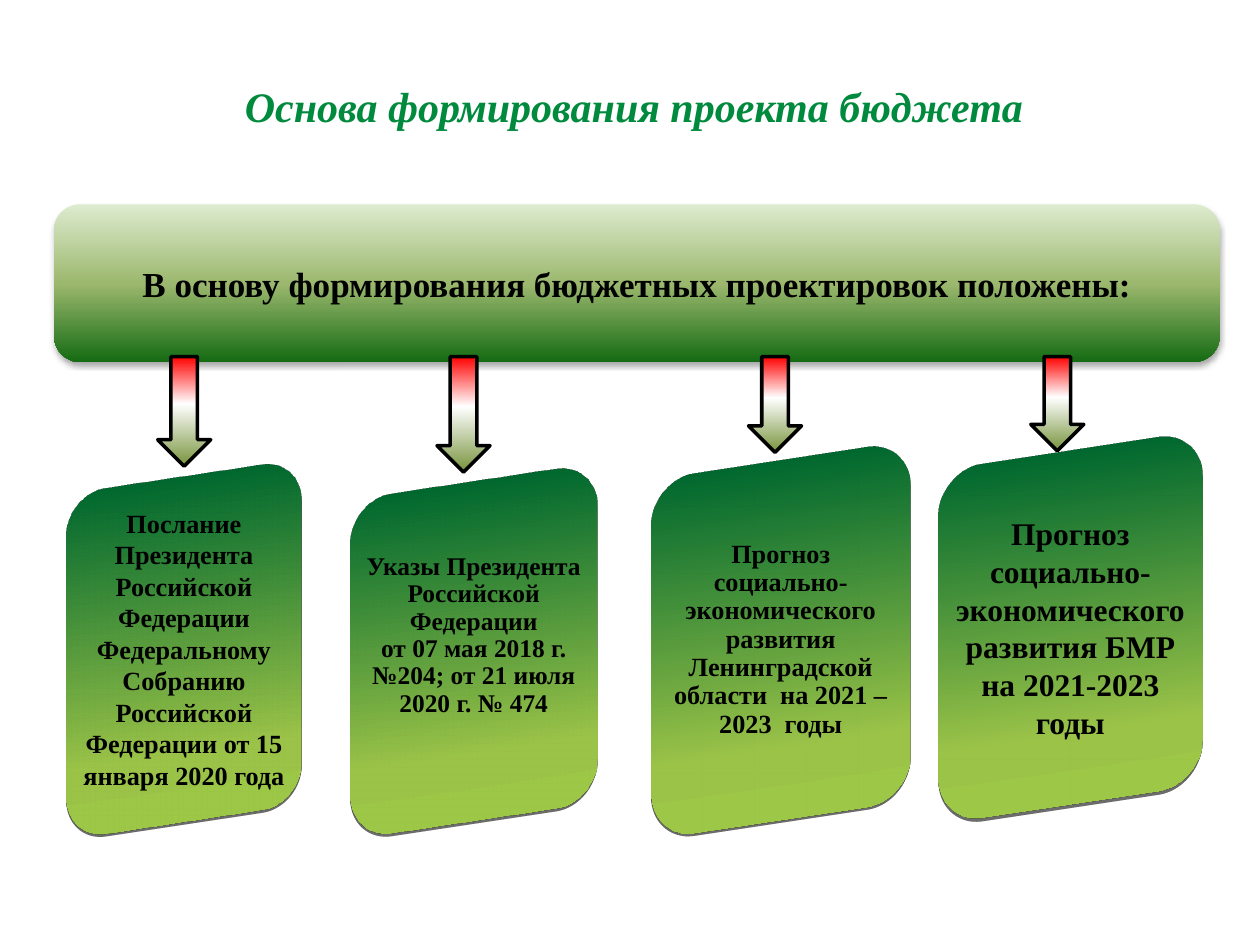
"""Build a slide on the four sources behind a draft budget."""
import pptx
import pptx.dml.color
import pptx.enum.shapes
import pptx.enum.text
import pptx.oxml
import pptx.oxml.ns
import pptx.util

Cm = pptx.util.Cm
Pt = pptx.util.Pt
Rgb = pptx.dml.color.RGBColor.from_string
Kind = pptx.enum.shapes.MSO_SHAPE


class Theme:
    font = "Times New Roman"
    green = "008A3E"
    black = "000000"
    card = [(0, "00682F"), (80, "9BC348"), (100, "9DC746")]
    bar = [(0, "DDEBCF"), (50, "9CB86E"), (100, "156B13")]
    arrow = [(0, "FF0000"), (43, "FFFFFF"), (100, "77933C")]
    title = 24
    head = 20
    large = 18
    body = 15
    small = 14.5


SPACE = pptx.oxml.ns.nsdecls("a")
SHADOW = f"""<a:effectLst {SPACE}><a:outerShdw blurRad="39370" dist="22860" dir="5400000"
 rotWithShape="0"><a:srgbClr val="{Theme.black}"><a:alpha val="35000"/></a:srgbClr>
</a:outerShdw></a:effectLst>"""
SCENE = f"""<a:scene3d {SPACE}><a:camera prst="isometricOffAxis1Right"/>
<a:lightRig rig="threePt" dir="t"/></a:scene3d>"""


def write(shape, text, size, color=Theme.black, italic=False, lines=None, foot=0.13):
    frame = shape.text_frame
    frame.word_wrap = True
    frame.vertical_anchor = pptx.enum.text.MSO_ANCHOR.MIDDLE
    frame.margin_bottom = Cm(foot)
    frame.text = text
    for para in frame.paragraphs:
        para.alignment = pptx.enum.text.PP_ALIGN.CENTER
        para.line_spacing = lines
        for run in para.runs:
            font = run.font
            font.name = Theme.font
            font.size = Pt(size)
            font.bold = True
            font.italic = italic
            font.color.rgb = Rgb(color)


def draw(kind, box, stops, *effects):
    shape = slide.shapes.add_shape(kind, *map(Cm, box))
    marks = "".join(
        f'<a:gs pos="{place * 1000}"><a:srgbClr val="{color}"/></a:gs>' for place, color in stops
    )
    props = shape.element.spPr
    props.append(pptx.oxml.parse_xml(
        f'<a:gradFill {SPACE} rotWithShape="1"><a:gsLst>{marks}</a:gsLst>'
        '<a:lin ang="5400000" scaled="0"/></a:gradFill>'
    ))
    shape.line.fill.background()
    if not effects:
        shape.shadow.inherit = False
    for effect in effects:
        props.append(pptx.oxml.parse_xml(effect))
    return shape


deck = pptx.Presentation()
deck.slide_width, deck.slide_height = Cm(25.4), Cm(19.05)
slide = deck.slides.add_slide(deck.slide_layouts[6])

title = slide.shapes.add_textbox(Cm(2.08), Cm(0.84), Cm(21.4), Cm(2.6))
write(title, "Основа формирования проекта бюджета", Theme.title, color=Theme.green, italic=True)

cards = [
    ((1.07, 9.42, 5.28, 7.32),
     "Послание Президента Российской\nФедерации\n"
     "Федеральному Собранию Российской Федерации от 15 января 2020 года",
     dict(size=Theme.body)),
    ((6.78, 9.53, 5.54, 7.19),
     "Указы Президента Российской Федерации\n"
     "от 07 мая 2018 г. №204; от 21 июля 2020 г. № 474",
     dict(size=Theme.small, lines=0.9, foot=0.75)),
    ((12.83, 9.09, 5.82, 7.62),
     "Прогноз социально-экономического развития Ленинградской "
     "области  на 2021 – 2023  годы",
     dict(size=Theme.body, lines=0.9)),
    ((18.62, 8.89, 5.92, 7.52),
     "Прогноз социально-экономического\nразвития БМР\nна 2021-2023 годы",
     dict(size=Theme.large)),
]
for box, text, style in cards:
    write(draw(Kind.ROUNDED_RECTANGLE, box, Theme.card, SHADOW, SCENE), text, **style)

bar = draw(Kind.ROUNDED_RECTANGLE, (1.09, 4.12, 23.5, 3.18), Theme.bar, SHADOW)
write(bar, "В основу формирования бюджетных проектировок положены:", Theme.head)

for left, height in [(3.18, 2.21), (8.81, 2.33), (15.09, 1.93), (20.78, 1.9)]:
    arrow = draw(Kind.DOWN_ARROW, (left, 7.19, 1.07, height), Theme.arrow)
    arrow.line.color.rgb = Rgb(Theme.black)
    arrow.line.width = Pt(2)

deck.save("out.pptx")
